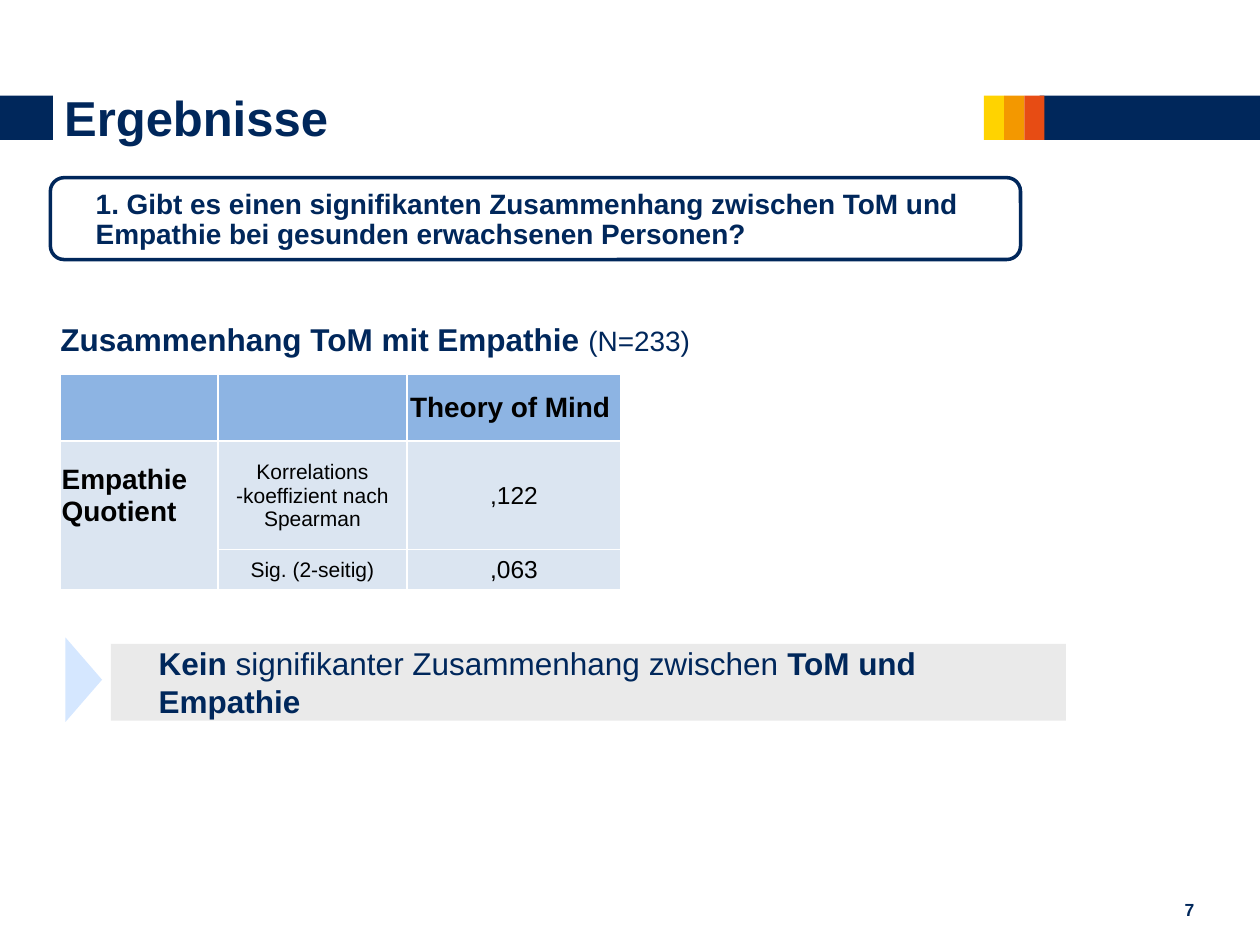
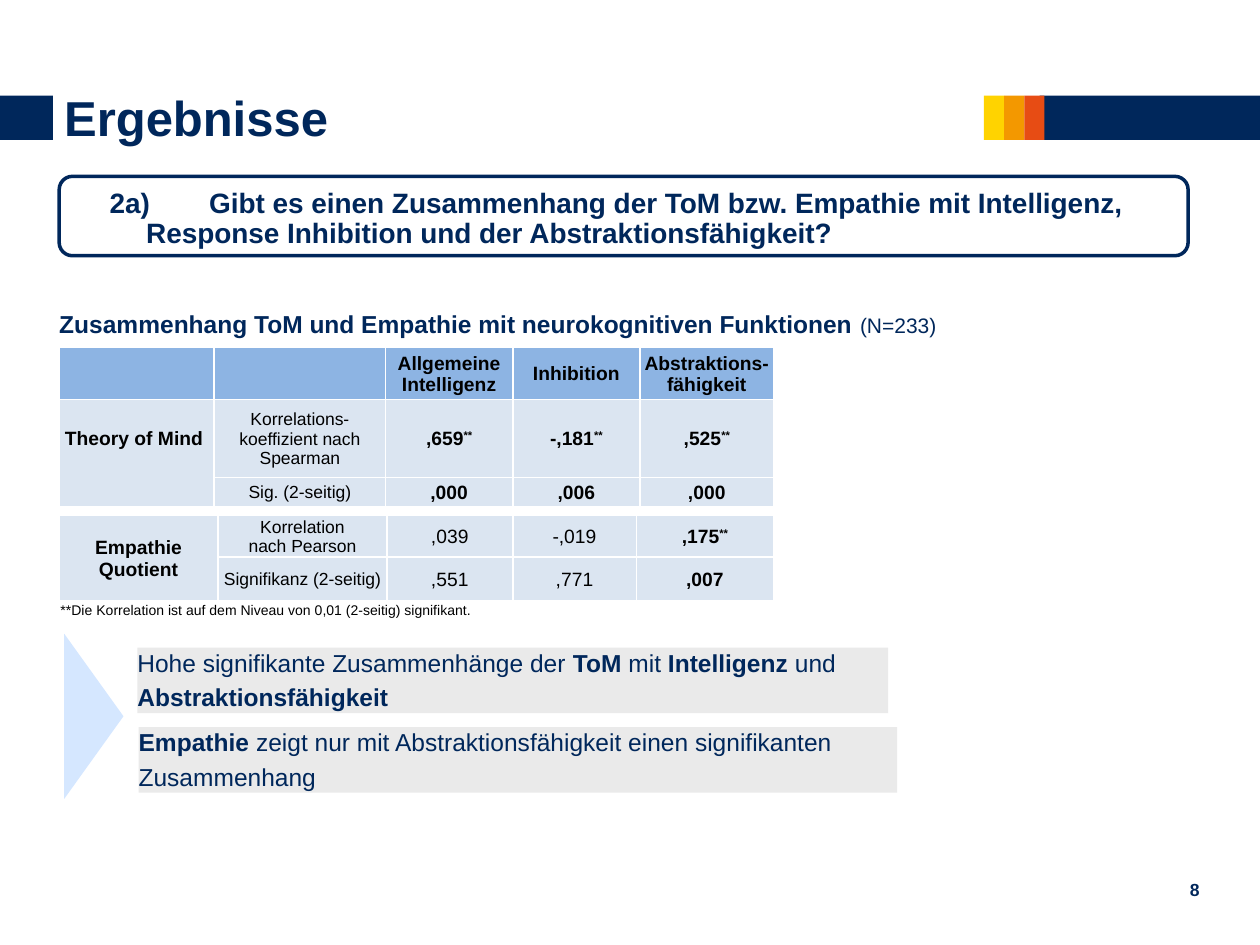
from dataclasses import dataclass

from lxml import etree
from pptx import Presentation
from pptx.dml.color import RGBColor
from pptx.enum.shapes import MSO_SHAPE
from pptx.enum.text import MSO_ANCHOR, MSO_AUTO_SIZE, PP_ALIGN
from pptx.oxml.ns import qn
from pptx.util import Inches, Pt

RECT, ROUNDED, TRIANGLE = MSO_SHAPE.RECTANGLE, MSO_SHAPE.ROUNDED_RECTANGLE, MSO_SHAPE.ISOSCELES_TRIANGLE
LEFT, CENTER, RIGHT = PP_ALIGN.LEFT, PP_ALIGN.CENTER, PP_ALIGN.RIGHT
TOP, MIDDLE, BOTTOM = MSO_ANCHOR.TOP, MSO_ANCHOR.MIDDLE, MSO_ANCHOR.BOTTOM


@dataclass(frozen=True)
class Theme:
    font: str = "Arial"
    navy: str = "00275B"
    black: str = "000000"
    white: str = "FFFFFF"
    header: str = "8DB4E3"
    body: str = "DBE5F1"
    arrow: str = "D5E7FF"
    finding: str = "EAEAEA"
    stripes: tuple = ("FFD300", "F39800", "E74C14")
    title: int = 28
    question: int = 16
    page: int = 10
    note: int = 8


THEME = Theme()

# Content: text parts are (text, bold); boxes are (left, top, width, height) in inches
SLIDES = [
    {
        "title": "Ergebnisse",
        "page": ("7", (7.15, 7.13, 2.33, 0.17)),
        "question": {
            "text": "1. Gibt es einen signifikanten Zusammenhang zwischen ToM und "
                    "Empathie bei gesunden erwachsenen Personen?",
            "frame": (0.4, 1.41, 7.7, 0.65), "box": (0.69, 1.44, 7.16, 0.59),
        },
        "heading": {"text": "Zusammenhang ToM mit Empathie ", "sample": "(N=233)",
                    "box": (0.48, 2.54, 5.16, 0.3), "sizes": (18, 16)},
        "tables": [{
            "at": (0.48, 2.97), "cols": (1.25, 1.5, 1.7), "rows": (0.53, 0.86, 0.32),
            "header": True, "label_align": LEFT, "bold_cols": (),
            "label_size": 16, "stat_size": 12, "value_size": 14,
            "grid": [("", "", "Theory of Mind "),
                     ("Empathie Quotient", "Korrelations\n-koeffizient nach Spearman", ",122"),
                     ("", "Sig. (2-seitig)", ",063")],
        }],
        "arrow": (0.33, 5.25, 0.67, 0.29),
        "findings": [{
            "box": (0.88, 5.11, 7.58, 0.61), "size": 18, "indent": 0.38,
            "lines": [[("Kein", True), (" signifikanter Zusammenhang zwischen ", False),
                       ("ToM und Empathie", True)]],
        }],
    },
    {
        "title": "Ergebnisse",
        "page": ("8", (7.19, 6.97, 2.33, 0.17)),
        "question": {
            "text": "2a)\tGibt es einen Zusammenhang der ToM bzw. Empathie mit Intelligenz, "
                    "Response Inhibition und der Abstraktionsfähigkeit?",
            "frame": (0.47, 1.4, 8.96, 0.63), "box": (0.8, 1.43, 8.33, 0.57),
            "hanging": 0.29, "tab": 0.88,
        },
        "heading": {"text": "Zusammenhang ToM und Empathie mit neurokognitiven Funktionen ",
                    "sample": "(N=233)", "box": (0.47, 2.45, 7.21, 0.3), "sizes": (14, 12)},
        "tables": [
            {
                "at": (0.47, 4.09), "cols": (1.26, 1.34, 1, 0.98, 1.09), "rows": (0.33, 0.34, 0.14),
                "header": False, "label_align": CENTER, "bold_cols": (4,),
                "label_size": 11, "stat_size": 10, "value_size": 11,
                "grid": [("Empathie Quotient", "Korrelation\nnach Pearson", ",039", "-,019", ",175**"),
                         ("", "Signifikanz (2-seitig)", ",551", ",771", ",007")],
                "note": "**Die Korrelation ist auf dem Niveau von 0,01 (2-seitig) signifikant.",
            },
            {
                "at": (0.47, 2.76), "cols": (1.23, 1.36, 1.01, 1.01, 1.06), "rows": (0.41, 0.62, 0.23),
                "header": True, "label_align": CENTER, "bold_cols": (2, 3, 4),
                "label_size": 11, "stat_size": 10, "value_size": 11,
                "grid": [("", "", "Allgemeine Intelligenz", "Inhibition", "Abstraktions-fähigkeit"),
                         ("Theory of Mind ", "Korrelations-\nkoeffizient nach Spearman",
                          ",659**", "-,181**", ",525**"),
                         ("", "Sig. (2-seitig)", ",000", ",006", ",000")],
            },
        ],
        "arrow": (0.09, 5.45, 1.31, 0.47),
        "findings": [
            {"box": (1.09, 5.14, 5.96, 0.52), "size": 14, "indent": 0,
             "lines": [[("Hohe signifikante Zusammenhänge der", False), (" ToM ", True), ("mit", False),
                        (" Intelligenz ", True), ("und", False)],
                       [("Abstraktionsfähigkeit", True)]]},
            {"box": (1.1, 5.77, 6.02, 0.52), "size": 14, "indent": 0,
             "lines": [[("Empathie ", True),
                        ("zeigt nur mit Abstraktionsfähigkeit einen signifikanten", False)],
                       [("Zusammenhang", False)]]},
        ],
    },
]


# Text and shape helpers
def inches(values):
    return [Inches(v) for v in values]


def style(font, size, color=THEME.navy, bold=None):
    font.name, font.size, font.bold = THEME.font, Pt(size), bold
    font.color.rgb = RGBColor.from_string(color)


def prepare(frame, anchor=TOP, inset=0):
    frame.word_wrap, frame.auto_size, frame.vertical_anchor = True, MSO_AUTO_SIZE.NONE, anchor
    frame.margin_left = frame.margin_right = frame.margin_top = frame.margin_bottom = Inches(inset)
    return frame


def add_text(slide, box, anchor=TOP, inset=0):
    return prepare(slide.shapes.add_textbox(*inches(box)).text_frame, anchor, inset)


def add_block(slide, kind, box, fill=None):
    block = slide.shapes.add_shape(kind, *inches(box))
    block.shadow.inherit = False
    if fill:
        block.fill.solid()
        block.fill.fore_color.rgb = RGBColor.from_string(fill)
        block.line.fill.background()
    else:
        block.fill.background()
        block.line.color.rgb = RGBColor.from_string(THEME.navy)
        block.line.width = Pt(2)
    return block


def set_indent(paragraph, margin, first=0):
    properties = paragraph._p.get_or_add_pPr()
    properties.set("marL", str(Inches(margin)))
    properties.set("indent", str(Inches(first)))
    return properties


# Parts shared by the slides
def add_frame(slide, title, page):
    band_top, band_height, stripe_left, stripe_width = 0.76, 0.35, 7.81, 0.16
    for left, width in ((0, 0.42), (8.25, 1.75)):
        add_block(slide, RECT, (left, band_top, width, band_height), THEME.navy)
    for i, color in enumerate(THEME.stripes):
        add_block(slide, RECT, (stripe_left + i * stripe_width, band_top, stripe_width, band_height), color)

    heading = slide.shapes.title
    heading.left, heading.top, heading.width, heading.height = inches((0.51, 0.69, 7.11, 0.47))
    line = prepare(heading.text_frame, BOTTOM).paragraphs[0]
    line.text, line.alignment = title, LEFT
    style(line.font, THEME.title, bold=True)

    number, box = page
    line = add_text(slide, box, BOTTOM).paragraphs[0]
    line.text, line.alignment = number, RIGHT
    style(line.font, THEME.page, bold=True)


def add_question(slide, question):
    add_block(slide, ROUNDED, question["frame"])
    line = add_text(slide, question["box"], inset=0.07).paragraphs[0]
    line.text = question["text"]
    line.line_spacing = 0.9
    if "hanging" in question:
        properties = set_indent(line, question["hanging"], -question["hanging"])
        tabs = etree.SubElement(properties, qn("a:tabLst"))
        etree.SubElement(tabs, qn("a:tab"), pos=str(Inches(question["tab"])), algn="l")
    style(line.font, THEME.question, bold=True)


def add_heading(slide, heading):
    line = add_text(slide, heading["box"]).paragraphs[0]
    for text, size, bold in zip((heading["text"], heading["sample"]), heading["sizes"], (True, False)):
        run = line.add_run()
        run.text = text
        style(run.font, size, bold=bold)


def add_finding(slide, finding):
    frame = prepare(add_block(slide, RECT, finding["box"], THEME.finding).text_frame)
    for i, parts in enumerate(finding["lines"]):
        line = frame.add_paragraph() if i else frame.paragraphs[0]
        line.alignment = LEFT
        set_indent(line, finding["indent"])
        if i:
            line.space_before = Pt(3)
        style(line.font, finding["size"])
        for text, bold in parts:
            run = line.add_run()
            run.text, run.font.bold = text, bold


# Result tables
def set_borders(cell, open_sides=""):
    properties = cell._tc.get_or_add_tcPr()
    for side in "LRTB":
        edge = etree.SubElement(properties, qn(f"a:ln{side}"), w=str(Pt(1)))
        if side in open_sides:
            etree.SubElement(edge, qn("a:noFill"))
        else:
            fill = etree.SubElement(edge, qn("a:solidFill"))
            etree.SubElement(fill, qn("a:srgbClr"), val=THEME.white)


def fill_cell(cell, text, size, bold, align, fill=None, open_sides=""):
    set_borders(cell, open_sides)
    if fill:
        cell.fill.solid()
        cell.fill.fore_color.rgb = RGBColor.from_string(fill)
    else:
        cell.fill.background()
    cell.vertical_anchor = MIDDLE if fill else TOP
    cell.margin_left = cell.margin_right = cell.margin_top = Inches(0.01)
    cell.margin_bottom = 0
    line = cell.text_frame.paragraphs[0]
    value = text.removesuffix("**")
    line.text, line.alignment = value, align
    style(line.font, size, THEME.black, bold)
    if value != text:
        stars = line.add_run()
        stars.text = "**"
        stars._r.get_or_add_rPr().set("baseline", "30000")


def add_results(slide, spec):
    cols, rows = spec["cols"], spec["rows"]
    table = slide.shapes.add_table(len(rows), len(cols), *inches((*spec["at"], sum(cols), sum(rows)))).table
    table.first_row = table.horz_banding = False
    for column, width in zip(table.columns, cols):
        column.width = Inches(width)
    for row, height in zip(table.rows, rows):
        row.height = Inches(height)

    first_body = 1 if spec["header"] else 0
    for r, texts in enumerate(spec["grid"]):
        for c, text in enumerate(texts):
            is_header, is_label = r < first_body, c == 0
            if is_header or is_label:
                size = spec["label_size"]
            else:
                size = spec["stat_size"] if c == 1 else spec["value_size"]
            # The label cells of a body pair share an edge without a line
            open_sides = ("B" if r == first_body else "T") if is_label and not is_header else ""
            fill_cell(table.cell(r, c), text, size,
                      bold=is_header or is_label or c in spec["bold_cols"],
                      align=spec["label_align"] if is_label else CENTER,
                      fill=THEME.header if is_header else THEME.body, open_sides=open_sides)
    if "note" in spec:
        table.cell(0, 0).merge(table.cell(1, 0))
        last = len(rows) - 1
        for c in range(len(cols)):
            fill_cell(table.cell(last, c), "" if c else spec["note"], THEME.note, False, LEFT)
        table.cell(last, 0).merge(table.cell(last, 2))


def main():
    deck = Presentation()
    deck.slide_width, deck.slide_height = Inches(10), Inches(7.5)
    for content in SLIDES:
        slide = deck.slides.add_slide(deck.slide_layouts[5])
        add_frame(slide, content["title"], content["page"])
        add_question(slide, content["question"])
        add_heading(slide, content["heading"])
        for spec in content["tables"]:
            add_results(slide, spec)
        add_block(slide, TRIANGLE, content["arrow"], THEME.arrow).rotation = 90
        for finding in content["findings"]:
            add_finding(slide, finding)
    deck.save("out.pptx")


if __name__ == "__main__":
    main()
